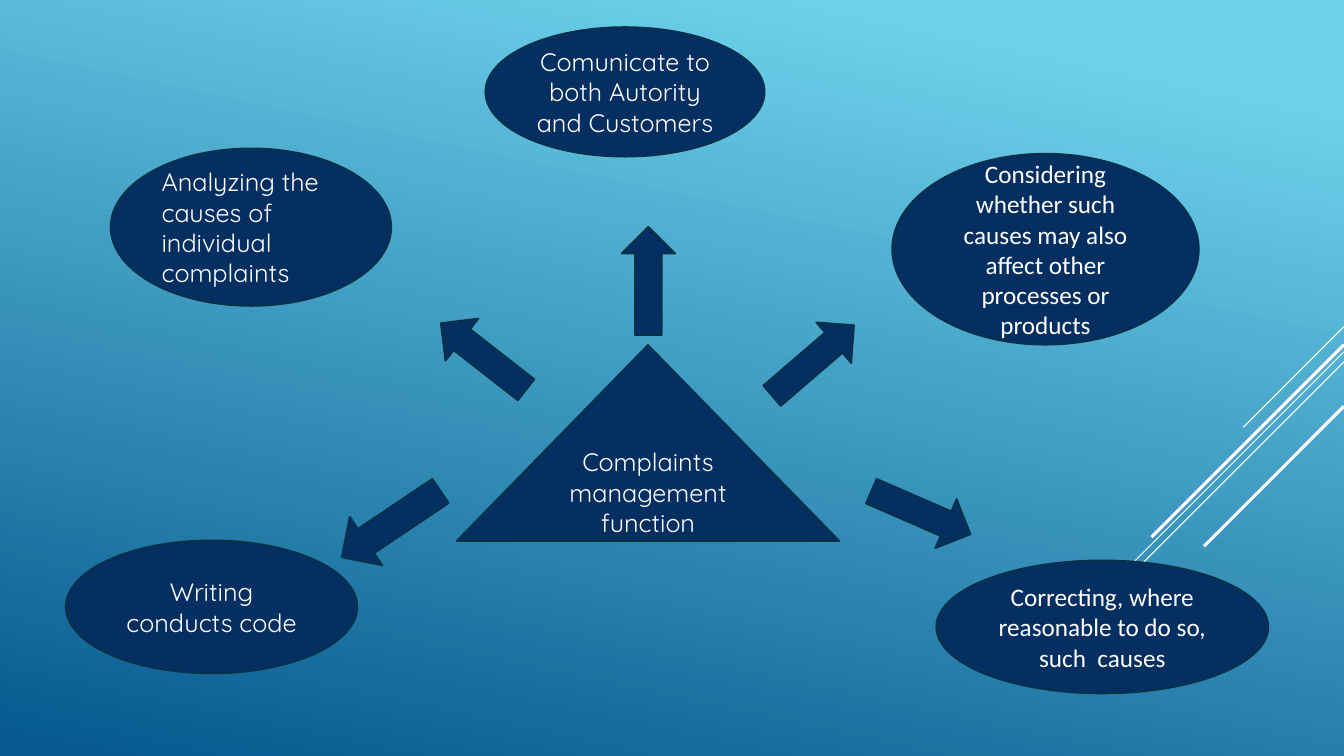
from pptx import Presentation
from pptx.dml.color import RGBColor
from pptx.enum.shapes import MSO_CONNECTOR, MSO_SHAPE as Preset
from pptx.enum.text import MSO_ANCHOR as Anchor, PP_ALIGN as Align
from pptx.oxml.ns import qn
from pptx.util import Pt
from lxml import etree


def color(hex_code):
    return RGBColor.from_string(hex_code)


def add_figure(preset, left, top, width, height):
    figure = slide.shapes.add_shape(preset, Pt(left), Pt(top), Pt(width), Pt(height))
    figure.shadow.inherit = False
    figure.fill.solid()
    figure.fill.fore_color.rgb = color("052F61")
    figure.line.color.rgb = color("043148")
    figure.line.width = Pt(1.25)
    return figure


deck = Presentation()
deck.slide_width, deck.slide_height = Pt(960), Pt(540)
slide = deck.slides.add_slide(deck.slide_layouts[6])

backdrop = slide.background.fill
backdrop.gradient()
backdrop.gradient_angle = 258
for stop, (position, shade) in zip(backdrop.gradient_stops, [(0.1, "6ED2EB"), (1, "06588E")]):
    stop.position = position
    stop.color.rgb = color(shade)

diagonals = [
    (233.3, 72, 0.75),
    (251.3, 234.7, 0.75),
    (258.5, 149.3, 0.75),
    (246.2, 137.5, 2.25),
    (290.2, 100, 2.25),
]
for top, reach, weight in diagonals:
    diagonal = slide.shapes.add_connector(
        MSO_CONNECTOR.STRAIGHT, Pt(960), Pt(top), Pt(960 - reach), Pt(top + reach))
    diagonal.line.color.rgb = color("FFFFFF")
    diagonal.line.width = Pt(weight)
    etree.SubElement(diagonal._element.spPr, qn("a:effectLst"))

topics = [
    (Preset.OVAL, 79, 106, 200.5, 112.5, "Quicksand", Align.LEFT,
     "Analyzing the causes of individual complaints"),
    (Preset.OVAL, 637.3, 109.8, 219, 136.4, "Calibri", Align.CENTER,
     "Considering whether such causes may also affect other processes or products"),
    (Preset.OVAL, 668.8, 400.3, 237.2, 95, "Calibri", Align.CENTER,
     "Correcting, where reasonable to do so, such  causes"),
    (Preset.ISOSCELES_TRIANGLE, 326.2, 246.4, 273.3, 140, "Quicksand", Align.CENTER,
     "Complaints management function"),
    (Preset.OVAL, 47, 386, 208.3, 95, "Quicksand", Align.CENTER,
     "Writing conducts code"),
    (Preset.OVAL, 346.7, 19.4, 199.5, 92.5, "Quicksand", Align.CENTER,
     "Comunicate to both Autority and Customers"),
]
for preset, left, top, width, height, typeface, align, wording in topics:
    frame = add_figure(preset, left, top, width, height).text_frame
    frame.word_wrap = True
    frame.vertical_anchor = Anchor.MIDDLE
    frame.text = wording
    paragraph = frame.paragraphs[0]
    paragraph.alignment = align
    for attribute, value in {"name": typeface, "size": Pt(18)}.items():
        setattr(paragraph.runs[0].font, attribute, value)
    paragraph.runs[0].font.color.rgb = color("FFFFFF")

arrows = [
    (561.6, 218.9, 38.3, 77.3, 49.3),
    (638.6, 327.6, 38.3, 77.3, 113.5),
    (326.2, 216, 38.3, 77.3, 308),
    (258.5, 331.9, 41.8, 85, 236.1),
    (444, 162, 38.3, 77.3, 0),
]
for *box, turn in arrows:
    add_figure(Preset.UP_ARROW, *box).rotation = turn

deck.save("out.pptx")
